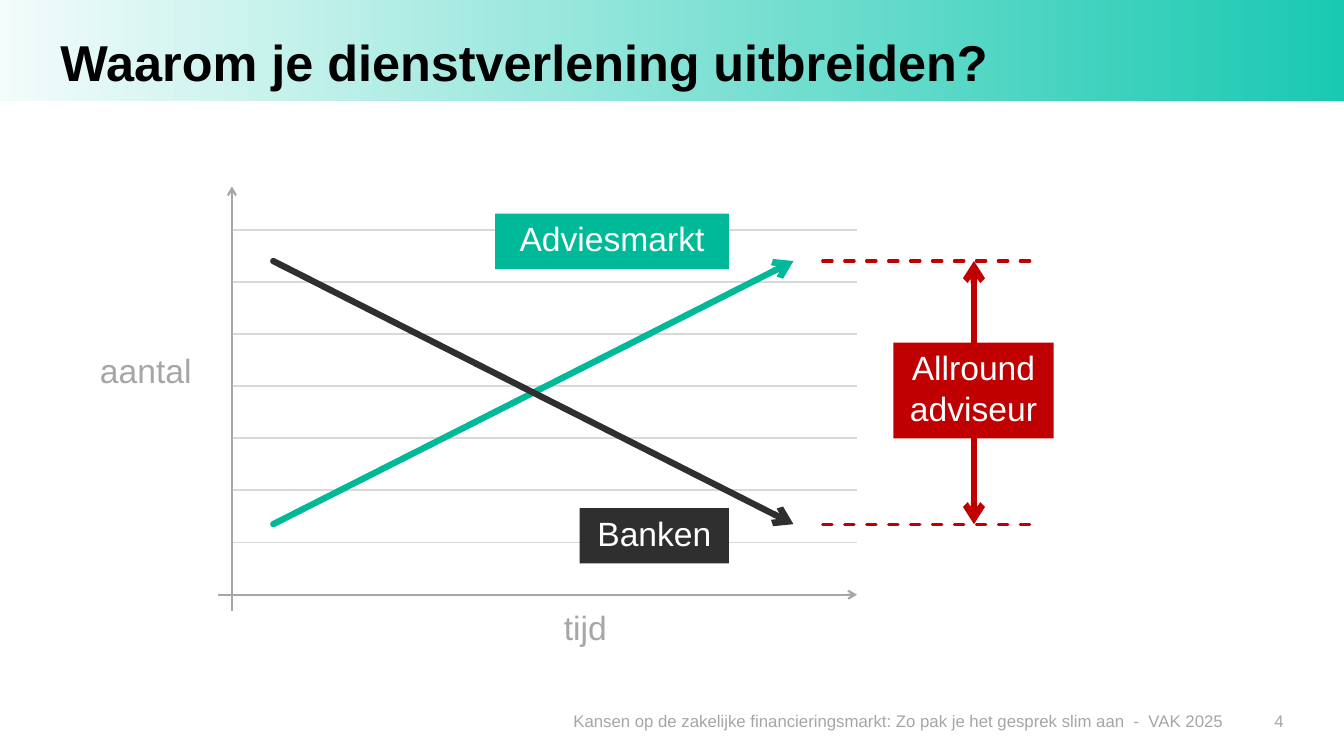
from pptx import Presentation
from pptx.dml.color import RGBColor
from pptx.enum.dml import MSO_LINE
from pptx.enum.shapes import MSO_CONNECTOR, MSO_SHAPE
from pptx.enum.text import MSO_ANCHOR, PP_ALIGN
from pptx.oxml.ns import qn
from pptx.util import Inches, Pt
from lxml.etree import SubElement

PALE = RGBColor(0xF2, 0xFC, 0xFB)
TEAL = RGBColor(0x1A, 0xC9, 0xB1)
GREEN = RGBColor(0x00, 0xB9, 0x99)
DARK = RGBColor(0x2F, 0x2F, 0x2F)
RED = RGBColor(0xC0, 0x00, 0x00)
GRID = RGBColor(0xD9, 0xD9, 0xD9)
GRAY = RGBColor(0xA6, 0xA6, 0xA6)
BLACK = RGBColor(0x00, 0x00, 0x00)
WHITE = RGBColor(0xFF, 0xFF, 0xFF)

TOP, LOW = 2.59, 5.2  # levels where the trends start and end


def add_line(slide, start, end, color, width, ends=(), dash=False, cap=False):
    """Straight line; ends lists the arrowheads, 'headEnd' and 'tailEnd'."""
    points = [Inches(n) for n in (*start, *end)]
    line = slide.shapes.add_connector(MSO_CONNECTOR.STRAIGHT, *points)
    line.line.color.rgb = color
    line.line.width = Pt(width)
    if dash:
        line.line.dash_style = MSO_LINE.DASH
    props = line.line._get_or_add_ln()
    if cap:
        props.set("cap", "rnd")
    for end_tag in ends:
        SubElement(props, qn("a:" + end_tag), type="arrow")
    SubElement(line._element.spPr, qn("a:effectLst"))


def set_text(shape, text, size, color, align, anchor, insets=(0, 0, 0, 0)):
    frame = shape.text_frame
    frame.word_wrap = True
    frame.vertical_anchor = anchor
    (frame.margin_left, frame.margin_top,
     frame.margin_right, frame.margin_bottom) = [Inches(n) for n in insets]
    para = frame.paragraphs[0]
    para.text = text
    para.alignment = align
    para.font.name = "Arial"
    para.font.size = Pt(size)
    para.font.color.rgb = color
    return para


def add_label(slide, box, text, size, color, align, anchor=MSO_ANCHOR.TOP):
    shape = slide.shapes.add_textbox(*[Inches(n) for n in box])
    return set_text(shape, text, size, color, align, anchor)


def add_block(slide, box):
    shape = slide.shapes.add_shape(MSO_SHAPE.RECTANGLE,
                                   *[Inches(n) for n in box])
    shape.shadow.inherit = False
    shape.line.fill.background()
    return shape


def add_tag(slide, box, text, color):
    shape = add_block(slide, box)
    shape.fill.solid()
    shape.fill.fore_color.rgb = color
    set_text(shape, text, 24, WHITE, PP_ALIGN.CENTER, MSO_ANCHOR.MIDDLE,
             (0.08, 0.04, 0.08, 0.1))


def add_header(slide):
    fill = add_block(slide, (0, 0, 13.33, 1)).fill
    fill.gradient()
    fill.gradient_angle = 0
    for stop, color in zip(fill.gradient_stops, (PALE, TEAL)):
        stop.color.rgb = color
    title = add_label(slide, (0.6, 0.4, 10.51, 0.51),
                      "Waarom je dienstverlening uitbreiden?",
                      36, BLACK, PP_ALIGN.LEFT)
    title.font.bold = True
    title.line_spacing = 0.85


def add_axes(slide):
    for row in range(7):
        y = 2.28 + row * 3.1 / 6
        add_line(slide, (2.3, y), (8.5, y), GRID, 1)
    for start, end in (((2.16, 5.9), (8.5, 5.9)), ((2.3, 6.06), (2.3, 1.85))):
        add_line(slide, start, end, GRAY, 1.5, ["tailEnd"])
    add_label(slide, (4.92, 6.02, 1.77, 0.4), "tijd", 24, GRAY,
              PP_ALIGN.CENTER, MSO_ANCHOR.MIDDLE)
    add_label(slide, (0.76, 3.47, 1.14, 0.4), "aantal", 24, GRAY,
              PP_ALIGN.RIGHT, MSO_ANCHOR.MIDDLE)


def add_trends(slide):
    for first, last, color in ((LOW, TOP, GREEN), (TOP, LOW, DARK)):
        add_line(slide, (2.71, first), (7.87, last), color, 4.5,
                 ["tailEnd"], cap=True)
    add_tag(slide, (5.75, 5.04, 1.48, 0.55), "Banken", DARK)
    add_tag(slide, (4.91, 2.12, 2.32, 0.55), "Adviesmarkt", GREEN)


def add_span(slide):
    for y in (TOP, LOW):
        add_line(slide, (8.16, y), (10.25, y), RED, 2.25, dash=True, cap=True)
    add_line(slide, (9.66, LOW), (9.66, TOP), RED, 4.5,
             ["headEnd", "tailEnd"])
    add_tag(slide, (8.86, 3.4, 1.59, 0.95), "Allround adviseur", RED)


def add_footer(slide):
    add_label(slide, (4.86, 7.05, 7.28, 0.2),
              "Kansen op de zakelijke financieringsmarkt: "
              "Zo pak je het gesprek slim aan  -  VAK 2025",
              12, GRAY, PP_ALIGN.RIGHT)
    add_label(slide, (12.34, 7.05, 0.39, 0.2), "4", 12, GRAY, PP_ALIGN.RIGHT)


def main():
    deck = Presentation()
    deck.slide_width = Inches(13.33)
    deck.slide_height = Inches(7.5)
    slide = deck.slides.add_slide(deck.slide_layouts[6])
    add_header(slide)
    # Diagram: axes, crossing trends, and the gap between them
    add_axes(slide)
    add_trends(slide)
    add_span(slide)
    add_footer(slide)
    deck.save("out.pptx")


if __name__ == "__main__":
    main()
